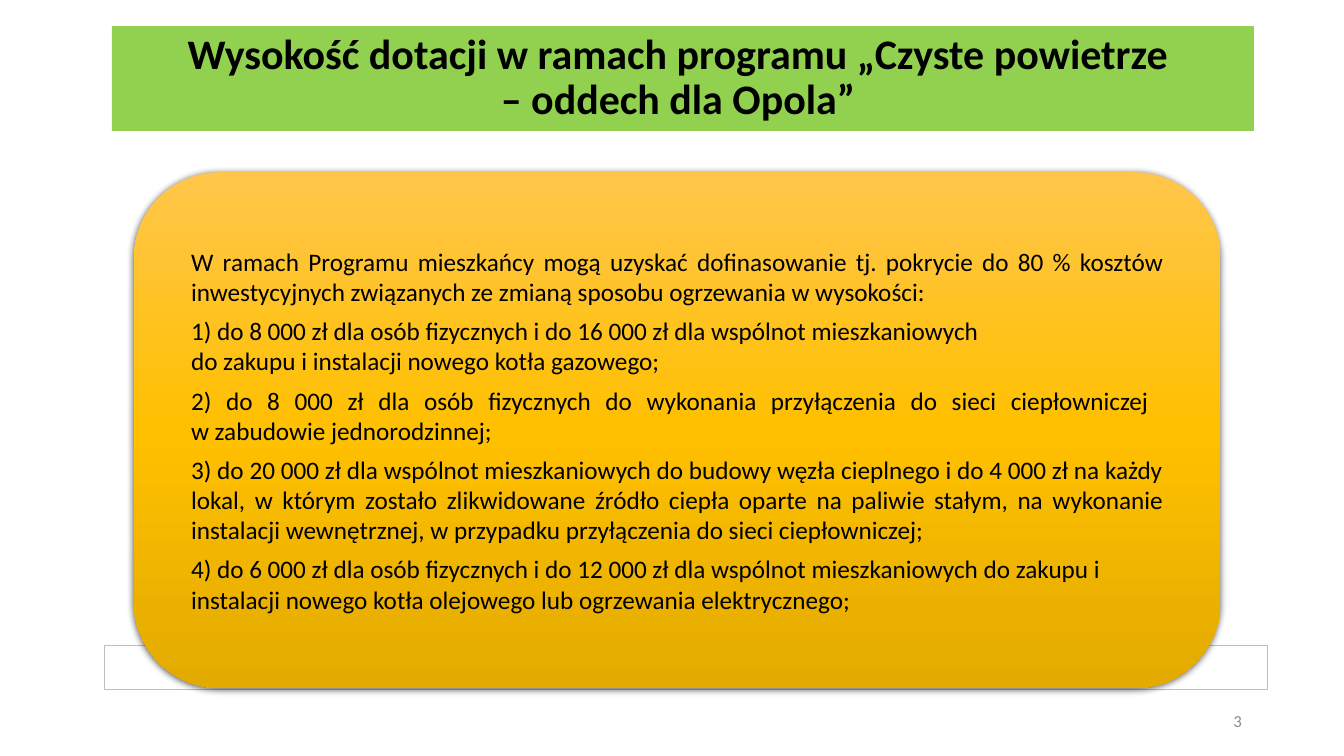
import pptx
import pptx.dml.color
import pptx.enum.shapes
import pptx.enum.text
import pptx.oxml
import pptx.oxml.ns
import pptx.util
from lxml import etree

Cm, Pt = pptx.util.Cm, pptx.util.Pt
RGB = pptx.dml.color.RGBColor.from_string
Align = pptx.enum.text.PP_ALIGN
Shape = pptx.enum.shapes.MSO_SHAPE
qn = pptx.oxml.ns.qn


class Theme:
    font = "Calibri"
    ink, white, grey, edge = "000000", "FFFFFF", "8C8C8C", "BFBFBF"
    green = "92D050"
    gold = [(0, "FFC64B"), (50, "FFC000"), (100, "E3AB00")]
    head, text, small = Pt(30), Pt(18), Pt(12)


TITLE = "Wysokość dotacji w ramach programu „Czyste powietrze \v– oddech dla Opola” "
J, L = Align.JUSTIFY, Align.LEFT
ITEMS = [
    (J, "W ramach Programu mieszkańcy mogą uzyskać dofinasowanie tj. pokrycie do 80 % "
        "kosztów inwestycyjnych związanych ze zmianą sposobu ogrzewania w wysokości: "),
    (L, "1) do 8 000 zł dla osób fizycznych i do 16 000 zł dla wspólnot mieszkaniowych "
        "\vdo zakupu i instalacji nowego kotła gazowego;"),
    (J, "2) do 8 000 zł dla osób fizycznych do wykonania przyłączenia do sieci "
        "ciepłowniczej \vw zabudowie jednorodzinnej;"),
    (J, "3) do 20 000 zł dla wspólnot mieszkaniowych do budowy węzła cieplnego i do "
        "4 000 zł na każdy lokal, w którym zostało zlikwidowane źródło ciepła oparte na "
        "paliwie stałym, na wykonanie instalacji wewnętrznej, w przypadku przyłączenia "
        "do sieci ciepłowniczej;"),
    (L, "4) do 6 000 zł dla osób fizycznych i do 12 000 zł dla wspólnot mieszkaniowych do "
        "zakupu i instalacji nowego kotła olejowego lub ogrzewania elektrycznego;"),
]


def apply(obj, vals):
    for key, val in vals.items():
        setattr(obj, key, val)


def place(shape, box):
    apply(shape, dict(zip(("left", "top", "width", "height"), map(Cm, box))))


def frame(shape, side):
    apply(shape.text_frame, {
        "word_wrap": True, "auto_size": pptx.enum.text.MSO_AUTO_SIZE.NONE,
        "vertical_anchor": pptx.enum.text.MSO_ANCHOR.MIDDLE,
        "margin_left": Cm(side), "margin_right": Cm(side)})
    return shape.text_frame


def write(para, text, size, color, bold=False, **form):
    para.text = text
    apply(para, form)
    for run in para.runs:
        apply(run.font, {"name": Theme.font, "size": size, "bold": bold})
        run.font.color.rgb = RGB(color)


def block(slide, kind, box):
    shape = slide.shapes.add_shape(kind, *map(Cm, box))
    shape.shadow.inherit = False
    return shape


def add_head(slide, box):
    head = slide.shapes.title
    place(head, box)
    head.fill.solid()
    head.fill.fore_color.rgb = RGB(Theme.green)
    write(frame(head, 0.25).paragraphs[0], TITLE, Theme.head, Theme.ink, True,
          alignment=Align.CENTER, line_spacing=0.9)


def add_strip(slide, box):
    strip = block(slide, Shape.RECTANGLE, box)
    strip.fill.solid()
    strip.fill.fore_color.rgb = RGB(Theme.white)
    tone = strip.fill._xPr.find(".//" + qn("a:srgbClr"))
    etree.SubElement(tone, qn("a:alpha"), val="90000")
    strip.line.color.rgb = RGB(Theme.edge)
    strip.line.width = Pt(0.5)


def add_panel(slide, box):
    # Rounded panel with a three-stop gradient
    panel = block(slide, Shape.ROUNDED_RECTANGLE, box)
    panel.line.fill.background()
    panel.fill.gradient()
    panel.fill.gradient_angle = 270
    props = panel._element.spPr
    stops = props.find(".//" + qn("a:gsLst"))
    for stop in list(stops):
        stops.remove(stop)
    for pos, color in Theme.gold:
        stop = etree.SubElement(stops, qn("a:gs"), pos=str(pos * 1000))
        etree.SubElement(stop, qn("a:srgbClr"), val=color)

    # Soft shadow below
    glow = etree.SubElement(props.find(qn("a:effectLst")), qn("a:outerShdw"),
                            blurRad=str(Pt(4.5)), dist=str(Pt(1.5)),
                            dir="5400000", rotWithShape="0")
    tone = etree.SubElement(glow, qn("a:srgbClr"), val=Theme.ink)
    etree.SubElement(tone, qn("a:alpha"), val="63000")

    # Body text, inset from the panel and drawn above it
    body = slide.placeholders[1]
    x, y, w, h = box
    pad = 0.635
    place(body, (x + pad, y + pad, w - 2 * pad, h - 2 * pad))
    text = frame(body, 0.8)
    text.margin_top = text.margin_bottom = 0
    for i, (align, words) in enumerate(ITEMS):
        para = text.add_paragraph() if i else text.paragraphs[0]
        write(para, words, Theme.text, Theme.ink, alignment=align, line_spacing=1.0,
              space_before=Pt(0), space_after=Pt(6.3))
        form = para._p.get_or_add_pPr()
        form.set("marL", "0")
        form.set("indent", "0")
        etree.SubElement(form, qn("a:buNone"))
    panel._element.addnext(body._element)


def add_page(slide, box):
    page = slide.shapes.add_textbox(*map(Cm, box))
    write(frame(page, 0.25).paragraphs[0], "3", Theme.small, Theme.grey,
          alignment=Align.RIGHT)


def main():
    deck = pptx.Presentation()
    apply(deck, {"slide_width": Cm(33.87), "slide_height": Cm(19.05)})
    slide = deck.slides.add_slide(deck.slide_layouts[1])
    add_strip(slide, (2.64, 16.26, 29.29, 1.12))
    add_panel(slide, (3.38, 4.34, 27.38, 13))
    add_head(slide, (2.82, 0.66, 28.78, 2.64))
    add_page(slide, (23.93, 17.65, 7.62, 1.02))
    deck.save("out.pptx")


if __name__ == "__main__":
    main()
